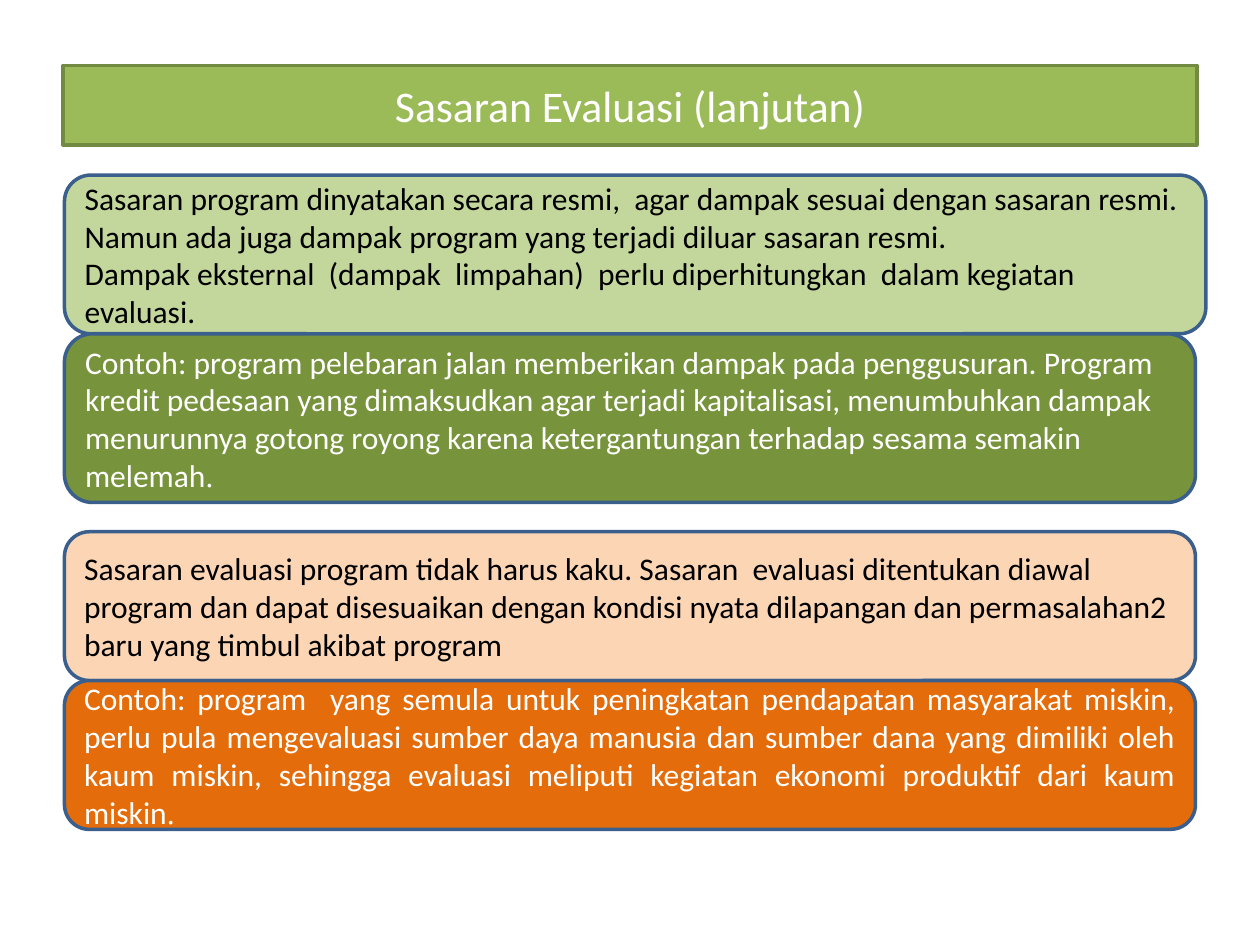
from pptx import Presentation
from pptx import util as u
from pptx.dml.color import RGBColor
from pptx.enum import shapes, text

COLORS = {
    "title": "9BBB59", "title line": "738A42", "box line": "3A5F8C",
    "light green": "C3D69B", "green": "77933C",
    "peach": "FCD5B5", "orange": "E46C0A",
    "black": "000000", "white": "FFFFFF",
}
BODY_FONT, STOP_FONT = "Calibri", "Times New Roman"
LEFT, ALIGN_LEFT, JUSTIFY = 1.3, text.PP_ALIGN.LEFT, text.PP_ALIGN.JUSTIFY

TITLE = "Sasaran Evaluasi (lanjutan)"

# Each paragraph is a list of (wording, font) spans
GOALS = [
    [("Sasaran program dinyatakan secara resmi,  agar dampak sesuai dengan sasaran resmi. "
      "Namun ada juga dampak program yang terjadi diluar sasaran resmi.", BODY_FONT)],
    [("Dampak eksternal  (dampak  limpahan)  perlu diperhitungkan  dalam kegiatan evaluasi.",
      BODY_FONT)],
]
GOALS_EXAMPLE = [
    [("Contoh: program pelebaran jalan memberikan dampak pada penggusuran. Program kredit "
      "pedesaan yang dimaksudkan agar terjadi kapitalisasi, menumbuhkan dampak menurunnya "
      "gotong royong karena ketergantungan terhadap sesama semakin melemah", BODY_FONT),
     (".", STOP_FONT)],
]
FLEXIBILITY = [
    [("Sasaran evaluasi program tidak harus kaku. Sasaran  evaluasi ditentukan diawal program "
      "dan dapat disesuaikan dengan kondisi nyata dilapangan dan permasalahan2 baru yang "
      "timbul akibat program", BODY_FONT)],
]
FLEXIBILITY_EXAMPLE = [
    [("Contoh: program  yang semula untuk peningkatan pendapatan masyarakat miskin, perlu pula "
      "mengevaluasi sumber daya manusia dan sumber dana yang dimiliki oleh kaum miskin, "
      "sehingga evaluasi meliputi kegiatan ekonomi produktif dari kaum miskin", BODY_FONT),
     (".", STOP_FONT)],
]

# Pairs of statement and example: paragraphs, fill, font colour, alignment, width, height
PAIRS = [
    [(GOALS, "light green", "black", ALIGN_LEFT, 23.01, 3.2),
     (GOALS_EXAMPLE, "green", "white", ALIGN_LEFT, 22.8, 3.4)],
    [(FLEXIBILITY, "peach", "black", ALIGN_LEFT, 22.8, 3),
     (FLEXIBILITY_EXAMPLE, "orange", "white", JUSTIFY, 22.8, 3)],
]
FIRST_TOP, PAIR_GAP = 3.53, 0.59


def color(name):
    return RGBColor.from_string(COLORS[name])


def paint(shape, fill, line):
    shape.fill.solid()
    shape.fill.fore_color.rgb = color(fill)
    shape.line.color.rgb = color(line)
    shape.line.width = u.Pt(2)


def write(shape, paragraphs, size=18, ink="black", align=ALIGN_LEFT):
    frame = shape.text_frame
    frame.word_wrap = True
    frame.auto_size = text.MSO_AUTO_SIZE.NONE
    frame.vertical_anchor = text.MSO_ANCHOR.MIDDLE
    for index, spans in enumerate(paragraphs):
        para = frame.add_paragraph() if index else frame.paragraphs[0]
        para.alignment = align
        for wording, font in spans:
            span = para.add_run()
            span.text = wording
            span.font.name = font
            span.font.size = u.Pt(size)
            span.font.color.rgb = color(ink)


deck = Presentation()
deck.slide_width, deck.slide_height = u.Cm(25.4), u.Cm(19.05)
page = deck.slides.add_slide(deck.slide_layouts[5])

# Title bar
title = page.shapes.title
title.left, title.top = u.Cm(1.27), u.Cm(1.32)
title.width, title.height = u.Cm(22.86), u.Cm(1.6)
paint(title, "title", "title line")
write(title, [[(TITLE, BODY_FONT)]], size=25, ink="white", align=text.PP_ALIGN.CENTER)

# Stacked boxes, with a gap after each pair
top = FIRST_TOP
for pair in PAIRS:
    for paragraphs, fill, ink, align, width, height in pair:
        box = page.shapes.add_shape(shapes.MSO_SHAPE.ROUNDED_RECTANGLE, u.Cm(LEFT),
                                    u.Cm(top), u.Cm(width), u.Cm(height))
        box.shadow.inherit = False
        paint(box, fill, "box line")
        write(box, paragraphs, ink=ink, align=align)
        top += height
    top += PAIR_GAP

deck.save("out.pptx")
